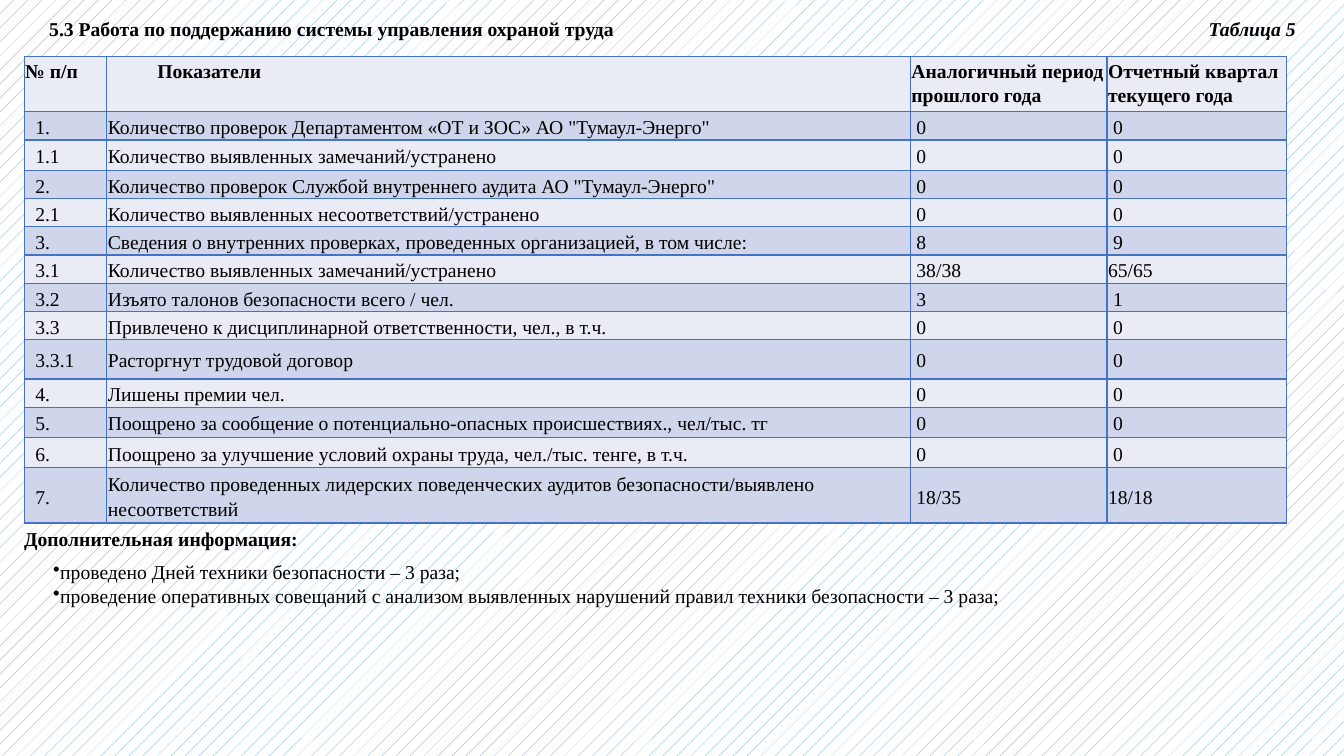
from lxml import etree
from pptx import Presentation
from pptx.dml.color import RGBColor
from pptx.enum.dml import MSO_PATTERN
from pptx.enum.text import MSO_ANCHOR, MSO_AUTO_SIZE, PP_ALIGN
from pptx.oxml.ns import qn
from pptx.util import Inches, Pt

BLACK = RGBColor(0x00, 0x00, 0x00)
WHITE = RGBColor(0xFF, 0xFF, 0xFF)
HATCH = RGBColor(0x5B, 0x9B, 0xD5)
BORDER = RGBColor(0x44, 0x72, 0xC4)
LIGHT = RGBColor(0xE9, 0xEB, 0xF5)
DARK = RGBColor(0xCF, 0xD5, 0xEA)
FONT = "Times New Roman"
PATTERN = MSO_PATTERN.PERCENT_5
TOP, MIDDLE = MSO_ANCHOR.TOP, MSO_ANCHOR.MIDDLE
JUSTIFY = PP_ALIGN.JUSTIFY
GROW = MSO_AUTO_SIZE.SHAPE_TO_FIT_TEXT

HEADER = ["№ п/п", "Показатели", "Аналогичный период прошлого года",
          "Отчетный квартал текущего года"]
INDICATORS = [
    ("1.", 'Количество проверок Департаментом «ОТ и ЗОС» АО "Тумаул-Энерго"', "0", "0"),
    ("1.1", "Количество выявленных замечаний/устранено", "0", "0"),
    ("2.", 'Количество проверок Службой внутреннего аудита АО "Тумаул-Энерго"', "0", "0"),
    ("2.1", "Количество выявленных несоответствий/устранено", "0", "0"),
    ("3.", "Сведения о внутренних проверках, проведенных организацией, в том числе:", "8", "9"),
    ("3.1", "Количество выявленных замечаний/устранено", "38/38", "65/65"),
    ("3.2", "Изъято талонов безопасности всего / чел.", "3", "1"),
    ("3.3", "Привлечено к дисциплинарной ответственности, чел., в т.ч.", "0", "0"),
    ("3.3.1", "Расторгнут трудовой договор", "0", "0"),
    ("4.", "Лишены премии чел.", "0", "0"),
    ("5.", "Поощрено за сообщение о потенциально-опасных происшествиях., чел/тыс. тг", "0", "0"),
    ("6.", "Поощрено за улучшение условий охраны труда, чел./тыс. тенге, в т.ч.", "0", "0"),
    ("7.", "Количество проведенных лидерских поведенческих аудитов "
           "безопасности/выявлено несоответствий", "18/35", "18/18"),
]
COLUMN_WIDTHS = [0.82, 7.97, 1.95, 1.78]
ROW_HEIGHT = 0.28
TALL_ROWS = {0: 0.55, 2: 0.3, 9: 0.39, 11: 0.3, 12: 0.3, 13: 0.55}


def write(tf, *lines, bold=False, italic=False, indent=0, spacing=None, align=None, bullet=None):
    """Fill a text frame with one paragraph per line."""
    for i, line in enumerate(lines):
        p = tf.paragraphs[0] if i == 0 else tf.add_paragraph()
        p.alignment = align
        p.line_spacing = spacing
        r = p.add_run()
        r.text = line
        r.font.name = FONT
        r.font.size = Pt(14)
        r.font.bold = bold
        r.font.italic = italic
        r.font.color.rgb = BLACK
        pPr = p._p.get_or_add_pPr()
        pPr.set("marL", "0")
        pPr.set("indent", str(Inches(indent)))
        if bullet:
            etree.SubElement(pPr, qn("a:buChar"), char=bullet)


def add_borders(cell):
    tcPr = cell._tc.get_or_add_tcPr()
    for i, side in enumerate(("a:lnL", "a:lnR", "a:lnT", "a:lnB")):
        ln = etree.Element(qn(side), w=str(Pt(1)))
        fill = etree.SubElement(ln, qn("a:solidFill"))
        etree.SubElement(fill, qn("a:srgbClr"), val=str(BORDER))
        tcPr.insert(i, ln)


prs = Presentation()
prs.slide_width, prs.slide_height = Inches(13.33), Inches(7.5)
s = prs.slides.add_slide(prs.slide_layouts[6])
background = s.background.fill
background.patterned()
background.pattern = PATTERN
background.fore_color.rgb = HATCH
background.back_color.rgb = WHITE

# Headings and notes around the table
for box, wrap, lines, style in [
    ((0.39, 0.12, 6, 0.34), False,
     ["5.3 Работа по поддержанию системы управления охраной труда"], {"bold": True}),
    ((11.89, 0.12, 1.1, 0.34), False, ["Таблица 5"], {"bold": True, "italic": True}),
    ((0.14, 5.18, 2.95, 0.34), False, ["Дополнительная информация:"], {"bold": True}),
    ((0.14, 5.51, 12.5, 0.81), True,
     ["проведено Дней техники безопасности – 3 раза;",
      "проведение оперативных совещаний с анализом выявленных нарушений "
      "правил техники безопасности – 3 раза;"],
     {"indent": 0.29, "align": JUSTIFY, "bullet": "•"}),
]:
    tf = s.shapes.add_textbox(*map(Inches, box)).text_frame
    tf.word_wrap = wrap
    tf.auto_size = GROW
    write(tf, *lines, **style)

# Table of indicators
rows = [HEADER, *INDICATORS]
table = s.shapes.add_table(len(rows), len(HEADER), Inches(0.24), Inches(0.56),
                           Inches(sum(COLUMN_WIDTHS)), Inches(4.62)).table
table.first_row = table.horz_banding = False
for column, width in zip(table.columns, COLUMN_WIDTHS):
    column.width = Inches(width)

for i, values in enumerate(rows):
    table.rows[i].height = Inches(TALL_ROWS.get(i, ROW_HEIGHT))
    last_indent = 0 if "/" in values[3] else 0.05
    indents = [0.1, 0, 0.05, last_indent] if i else [0, 0.49, 0, 0]
    for j, (value, indent) in enumerate(zip(values, indents)):
        cell = table.cell(i, j)
        cell.margin_left = cell.margin_right = cell.margin_top = Inches(0.01)
        cell.margin_bottom = 0
        cell.vertical_anchor = MIDDLE if i else TOP
        cell.fill.solid()
        cell.fill.fore_color.rgb = DARK if i % 2 else LIGHT
        add_borders(cell)
        write(cell.text_frame, value, bold=i == 0, indent=indent, spacing=1.15)

prs.save("out.pptx")
